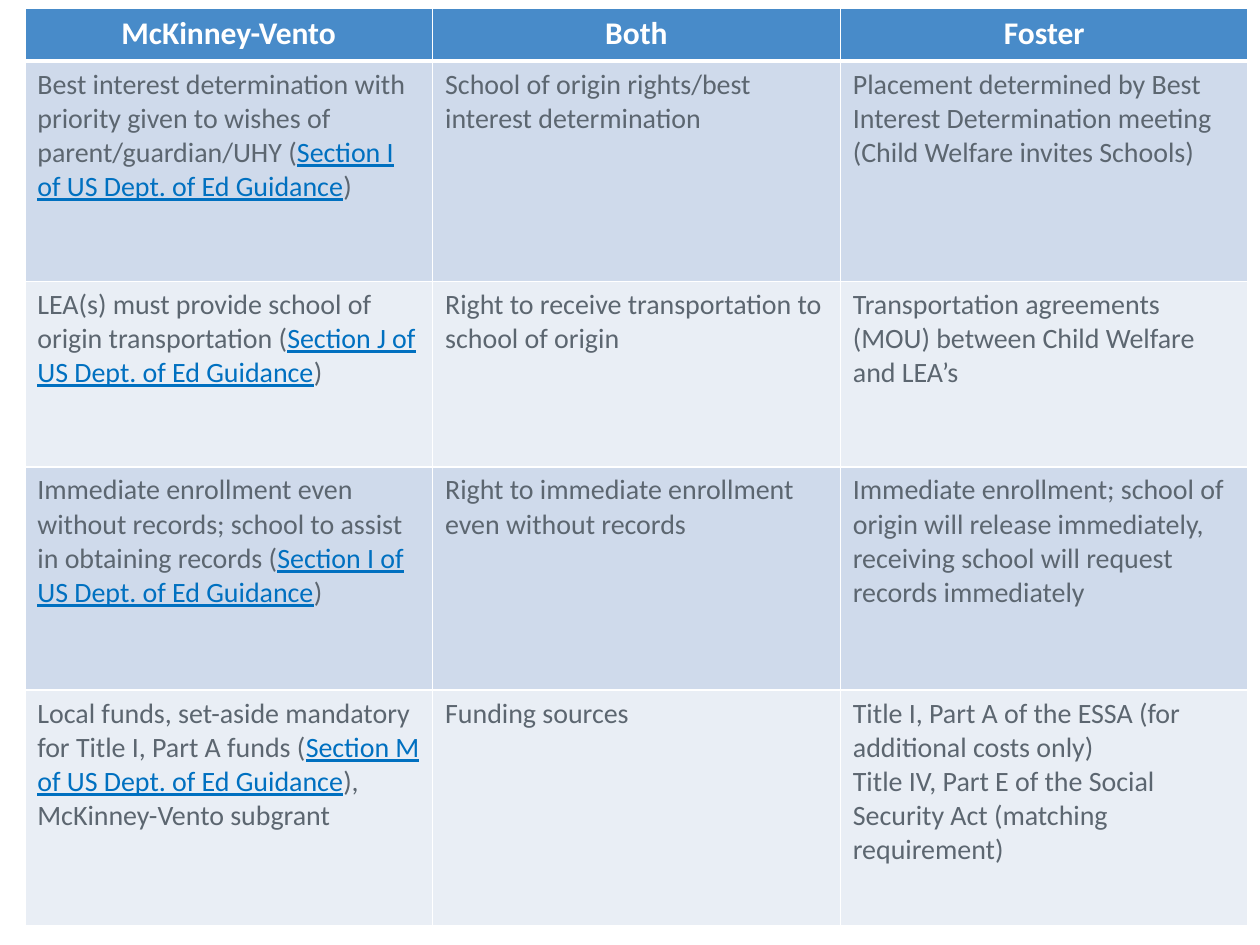
from dataclasses import dataclass

from lxml.etree import SubElement
from pptx import Presentation
from pptx.dml.color import RGBColor
from pptx.enum.text import PP_ALIGN as Align
from pptx.oxml.ns import qn
from pptx.slide import Slide
from pptx.util import Cm, Pt

WHITE = RGBColor(0xFF, 0xFF, 0xFF)
HEADER_BLUE = RGBColor(0x48, 0x8B, 0xC9)
BAND_DARK = RGBColor(0xCF, 0xDA, 0xEB)
BAND_LIGHT = RGBColor(0xE9, 0xEE, 0xF5)
BODY_GREY = RGBColor(0x5C, 0x66, 0x70)
LINK_BLUE = RGBColor(0x00, 0x70, 0xC0)

PROGRAMS = ["McKinney-Vento", "Both", "Foster"]
COLUMN_WIDTH = 8.22
HEADER_HEIGHT = 1.07
TOPIC_HEIGHTS = [4.44, 3.74, 4.5, 4.75]


def guidance(before, section, after=")"):
    return [[before, (f"Section {section} of US Dept. of Ed Guidance",), after]]


TOPICS = [
    [
        guidance("Best interest determination with priority given to wishes of "
                 "parent/guardian/UHY (", "I"),
        [["School of origin rights/best interest determination"]],
        [["Placement determined by Best Interest Determination meeting "
          "(Child Welfare invites Schools)"]],
    ],
    [
        guidance("LEA(s) must provide school of origin transportation (", "J"),
        [["Right to receive transportation to school of origin"]],
        [["Transportation agreements (MOU) between Child Welfare and LEA’s"]],
    ],
    [
        guidance("Immediate enrollment even without records; school to assist "
                 "in obtaining records (", "I"),
        [["Right to immediate enrollment even without records"]],
        [["Immediate enrollment; school of origin will release immediately, "
          "receiving school will request records immediately"]],
    ],
    [
        guidance("Local funds, set-aside mandatory for Title I, Part A funds (",
                 "M", "), McKinney-Vento subgrant"),
        [["Funding sources"]],
        [["Title I, Part A of the ESSA (for additional costs only)"],
         ["Title IV, Part E of the Social Security Act (matching requirement)"]],
    ],
]


def write(frame, paragraphs, *, font, size, color, link_color, bold=False,
          align=Align.LEFT):
    for index, pieces in enumerate(paragraphs):
        paragraph = frame.paragraphs[0] if index == 0 else frame.add_paragraph()
        paragraph.alignment = align
        for piece in pieces:
            linked = isinstance(piece, tuple)
            run = paragraph.add_run()
            run.text = piece[0] if linked else piece
            run.font.name = font
            run.font.size = Pt(size)
            run.font.bold = bold
            run.font.underline = linked
            run.font.color.rgb = link_color if linked else color


@dataclass
class Deck:
    slide: Slide
    font: str = "Calibri"
    header_size: int = 18
    body_size: int = 16
    rule: int = 1
    header_rule: int = 3

    def borders(self, cell, top, bottom):
        properties = cell._tc.get_or_add_tcPr()
        widths = {"lnL": self.rule, "lnR": self.rule, "lnT": top, "lnB": bottom}
        for side, width in widths.items():
            line = SubElement(properties, qn(f"a:{side}"), w=str(Pt(width)))
            fill = SubElement(line, qn("a:solidFill"))
            SubElement(fill, qn("a:srgbClr"), val=str(WHITE))

    def cell(self, cell, paragraphs, fill, top, bottom, **style):
        self.borders(cell, top, bottom)
        cell.fill.solid()
        cell.fill.fore_color.rgb = fill
        write(cell.text_frame, paragraphs, font=self.font,
              link_color=LINK_BLUE, **style)

    def table(self, left, top, headings, rows, column_width, heights):
        grid = self.slide.shapes.add_table(
            len(heights), len(headings), Cm(left), Cm(top),
            Cm(column_width * len(headings)), Cm(sum(heights))).table
        grid.horz_banding = False
        for column in grid.columns:
            column.width = Cm(column_width)
        for row, height in zip(grid.rows, heights):
            row.height = Cm(height)
        for column, heading in enumerate(headings):
            self.cell(grid.cell(0, column), [[heading]], HEADER_BLUE,
                      self.rule, self.header_rule, size=self.header_size,
                      color=WHITE, bold=True, align=Align.CENTER)
        for number, row in enumerate(rows, start=1):
            band = BAND_DARK if number % 2 else BAND_LIGHT
            upper = self.header_rule if number == 1 else self.rule
            for column, paragraphs in enumerate(row):
                self.cell(grid.cell(number, column), paragraphs, band,
                          upper, self.rule, size=self.body_size,
                          color=BODY_GREY)


def main():
    presentation = Presentation()
    presentation.slide_width = Cm(25.4)
    presentation.slide_height = Cm(19.05)
    deck = Deck(presentation.slides.add_slide(presentation.slide_layouts[6]))
    deck.table(0.5, 0.16, PROGRAMS, TOPICS, COLUMN_WIDTH,
               [HEADER_HEIGHT, *TOPIC_HEIGHTS])
    presentation.save("out.pptx")


if __name__ == "__main__":
    main()
